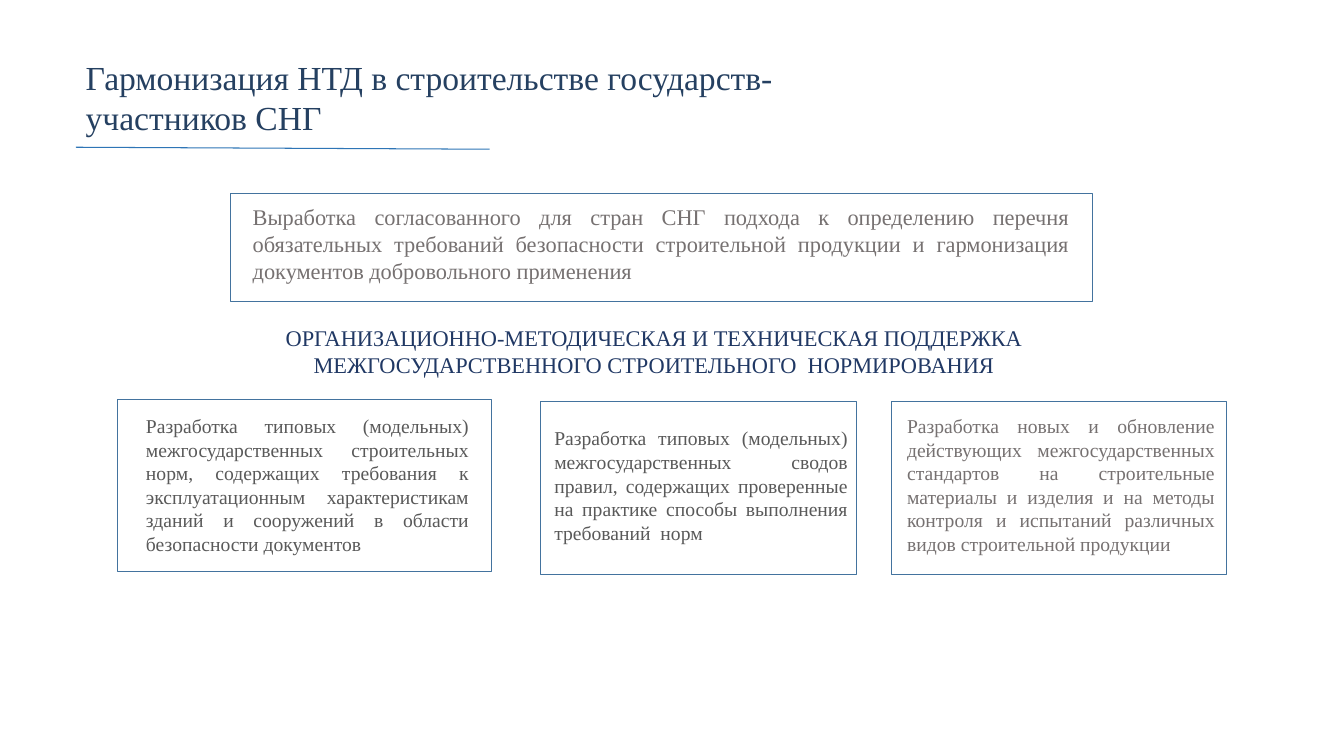
"""Build a slide on harmonising construction standards across the CIS states."""
from dataclasses import dataclass

from lxml import etree
from pptx import Presentation
from pptx import util as u
from pptx.dml.color import RGBColor
from pptx.enum import shapes, text
from pptx.oxml import ns

FONT = "Times New Roman"
NAVY, INDIGO, GREY, DARK_GREY = "254061", "203864", "767171", "595959"
WHITE, FRAME_BLUE, RULE_BLUE = "FFFFFF", "43739E", "2E75B6"


@dataclass(frozen=True)
class Area:
    left: float
    top: float
    width: float
    height: float

    def lengths(self) -> tuple[u.Cm, u.Cm, u.Cm, u.Cm]:
        return u.Cm(self.left), u.Cm(self.top), u.Cm(self.width), u.Cm(self.height)


@dataclass(frozen=True)
class Card:
    frame: Area
    label: Area
    words: str
    size: int
    color: str


CARDS = [
    Card(Area(5.79, 4.88, 21.74, 2.72), Area(6.12, 5, 21.08, 2.31),
         "Выработка согласованного для стран СНГ подхода к определению перечня "
         "обязательных требований безопасности строительной продукции и гармонизация "
         "документов добровольного применения", 16, GREY),
    Card(Area(2.95, 10.06, 9.42, 4.34), Area(3.43, 10.31, 8.64, 3.84),
         "Разработка типовых (модельных) межгосударственных строительных норм, "
         "содержащих требования к эксплуатационным характеристикам зданий и сооружений "
         "в области безопасности документов", 14, DARK_GREY),
    Card(Area(13.61, 10.11, 7.98, 4.37), Area(13.72, 10.62, 7.9, 3.25),
         "Разработка типовых (модельных) межгосударственных сводов правил, содержащих "
         "проверенные на практике способы выполнения требований  норм", 14, DARK_GREY),
    Card(Area(22.45, 10.11, 8.46, 4.37), Area(22.61, 10.31, 8.26, 3.84),
         "Разработка новых и обновление действующих межгосударственных стандартов на "
         "строительные материалы и изделия и на методы контроля и испытаний различных "
         "видов строительной продукции", 14, GREY),
]


def rgb(color: str) -> RGBColor:
    return RGBColor.from_string(color)


def add_text(s, area: Area, words: str, *, size: int, color: str,
             align: text.PP_ALIGN = text.PP_ALIGN.LEFT) -> None:
    tf = s.shapes.add_textbox(*area.lengths()).text_frame
    tf.word_wrap = True
    tf.auto_size = text.MSO_AUTO_SIZE.SHAPE_TO_FIT_TEXT
    tf.text = words
    for p in tf.paragraphs:
        p.alignment = align
        for r in p.runs:
            r.font.name = FONT
            r.font.size = u.Pt(size)
            r.font.color.rgb = rgb(color)


def add_card(s, card: Card) -> None:
    sp = s.shapes.add_shape(shapes.MSO_SHAPE.RECTANGLE, *card.frame.lengths())
    sp.shadow.inherit = False
    sp.fill.solid()
    sp.fill.fore_color.rgb = rgb(WHITE)
    sp.line.color.rgb = rgb(FRAME_BLUE)
    sp.line.width = u.Pt(0.25)
    add_text(s, card.label, card.words, size=card.size, color=card.color,
             align=text.PP_ALIGN.JUSTIFY)


def add_rule(s, x1: float, y1: float, x2: float, y2: float) -> None:
    rule = s.shapes.add_connector(shapes.MSO_CONNECTOR.STRAIGHT,
                                  u.Cm(x1), u.Cm(y1), u.Cm(x2), u.Cm(y2))
    rule.line.color.rgb = rgb(RULE_BLUE)
    rule.line.width = u.Pt(0.75)
    etree.SubElement(rule._element.spPr, ns.qn("a:effectLst"))


def main() -> None:
    prs = Presentation()
    prs.slide_width, prs.slide_height = u.Cm(33.87), u.Cm(19.05)
    s = prs.slides.add_slide(prs.slide_layouts[6])
    add_text(s, Area(1.91, 1.3, 20.32, 2.31),
             "Гармонизация НТД в строительстве государств-участников СНГ",
             size=24, color=NAVY)
    add_rule(s, 1.91, 3.71, 12.34, 3.76)
    add_text(s, Area(4.06, 8.05, 24.99, 1.63),
             "ОРГАНИЗАЦИОННО-МЕТОДИЧЕСКАЯ И ТЕХНИЧЕСКАЯ ПОДДЕРЖКА \n"
             "МЕЖГОСУДАРСТВЕННОГО СТРОИТЕЛЬНОГО  НОРМИРОВАНИЯ ",
             size=16, color=INDIGO, align=text.PP_ALIGN.CENTER)
    for card in CARDS:
        add_card(s, card)
    prs.save("out.pptx")


if __name__ == "__main__":
    main()
